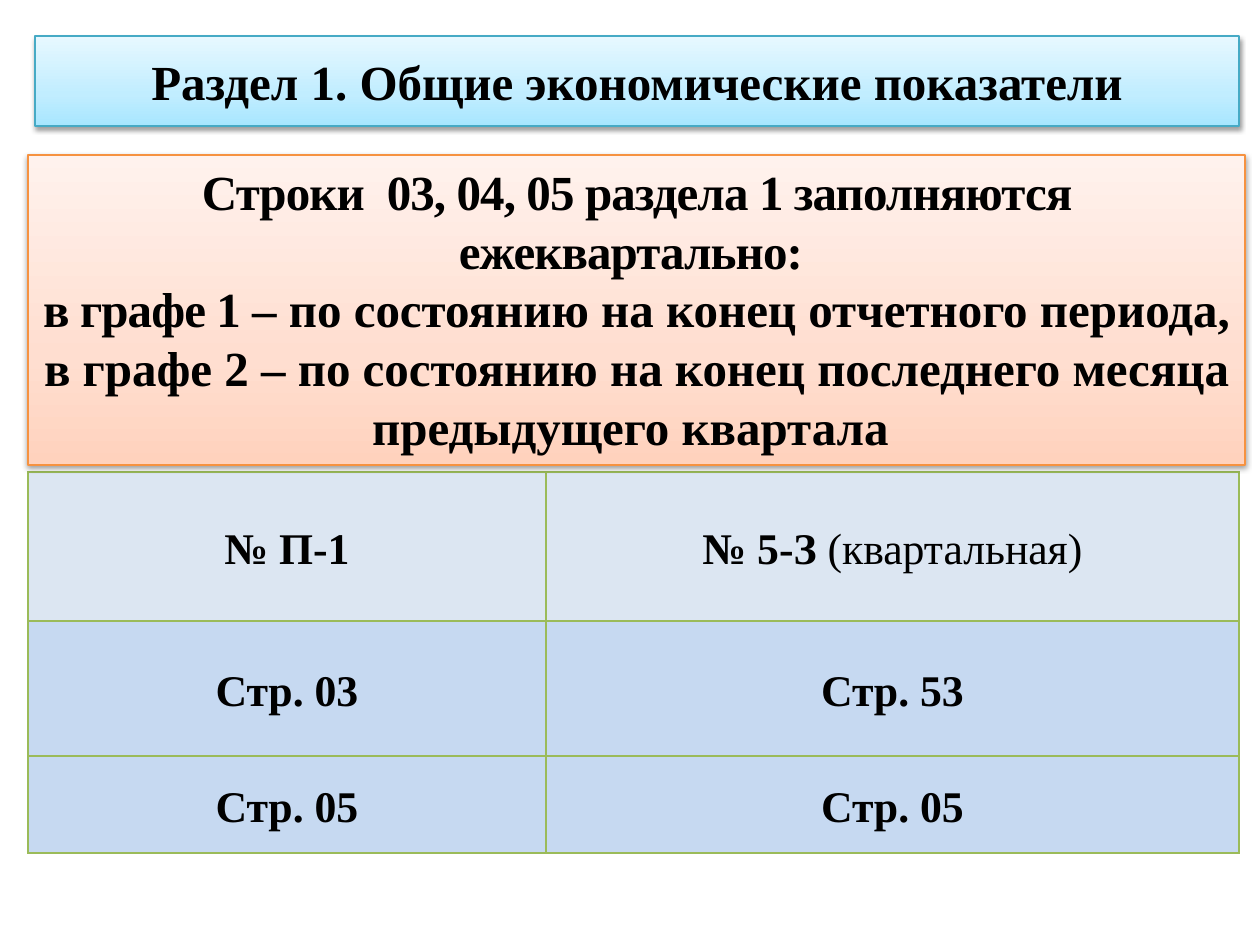
import pptx
import pptx.dml.color
import pptx.enum.shapes
import pptx.enum.text
import pptx.oxml
import pptx.oxml.ns
import pptx.util

# Content: a paragraph is a list of (text, run format) pairs
TITLE = [[("Раздел 1. Общие экономические показатели", {})]]
TIGHT = {"spacing": -0.5}
RULES = [
    [("Строки  03, 04, 05 раздела 1 заполняются ежеквартально: ", TIGHT)],
    [("в графе 1 ", TIGHT), ("– по состоянию на конец отчетного периода, ", {})],
    [("в графе 2 – по состоянию на конец последнего месяца предыдущего квартала ", {})],
]
TABLE_ROWS = [
    [[("№ П-1", {})], [("№ 5-З ", {}), ("(квартальная)", {"bold": False})]],
    [[("Стр. 03", {})], [("Стр. 53", {})]],
    [[("Стр. 05", {})], [("Стр. 05", {})]],
]

# Geometry in px
SLIDE_SIZE = (1260, 945)
TITLE_BOX = (35, 36, 1204, 90)
RULES_BOX = (28, 155, 1217, 310)
TABLE_ORIGIN = (28, 472)
COLUMN_WIDTHS = (518, 693)
ROW_HEIGHTS = (149, 135, 97)
CELL_MARGINS = ((11, 5), (13, 0))  # horizontal, vertical for each column

FONT = "Times New Roman"
COLORS = {
    "text": "000000",
    "title line": "46AAC5",
    "rules line": "F69240",
    "table line": "9BBB59",
    "table head": "DCE6F2",
    "table body": "C6D9F1",
}
# Gradient stops run from the bottom up
TITLE_STOPS = [(0, "A7E6FF"), (35, "C1EDFF"), (100, "E7F8FF")]
RULES_STOPS = [(0, "FFD2BD"), (35, "FFDED0"), (100, "FFF2ED")]
NAMESPACE = 'xmlns:a="http://schemas.openxmlformats.org/drawingml/2006/main"'


def px(value):
    return pptx.util.Emu(round(value * 914400 / 126))


def color(name):
    return pptx.dml.color.RGBColor.from_string(COLORS[name])


def write_text(frame, paragraphs, size=28, line_spacing=None):
    for index, runs in enumerate(paragraphs):
        paragraph = frame.paragraphs[0] if index == 0 else frame.add_paragraph()
        paragraph.alignment = pptx.enum.text.PP_ALIGN.CENTER
        paragraph.line_spacing = line_spacing
        for text, style in runs:
            run = paragraph.add_run()
            run.text = text
            run.font.name = FONT
            run.font.size = pptx.util.Pt(size)
            run.font.bold = style.get("bold", True)
            run.font.color.rgb = color("text")
            if "spacing" in style:
                run._r.get_or_add_rPr().set("spc", str(round(style["spacing"] * 100)))


def add_panel(slide, box, paragraphs, stops, line):
    shape = slide.shapes.add_shape(
        pptx.enum.shapes.MSO_SHAPE.RECTANGLE, *map(px, box))
    shape.line.color.rgb = color(line)
    shape.line.width = pptx.util.Pt(0.75)

    # Three-stop gradient
    shape.fill.gradient()
    shape.fill.gradient_angle = 90
    properties = shape._element.spPr
    stop_list = properties.find(".//" + pptx.oxml.ns.qn("a:gsLst"))
    for stop in list(stop_list):
        stop_list.remove(stop)
    for position, value in stops:
        stop_list.append(pptx.oxml.parse_xml(
            f'<a:gs {NAMESPACE} pos="{position * 1000}"><a:srgbClr val="{value}"/></a:gs>'))

    # Soft shadow below
    shape.shadow.inherit = False
    properties.find(pptx.oxml.ns.qn("a:effectLst")).append(pptx.oxml.parse_xml(
        f'<a:outerShdw {NAMESPACE} blurRad="40000" dist="20000" dir="5400000" rotWithShape="0">'
        '<a:srgbClr val="000000"><a:alpha val="38000"/></a:srgbClr></a:outerShdw>'))

    frame = shape.text_frame
    frame.word_wrap = True
    frame.vertical_anchor = pptx.enum.text.MSO_ANCHOR.MIDDLE
    write_text(frame, paragraphs)
    return shape


def set_borders(cell, line):
    properties = cell._tc.get_or_add_tcPr()
    for index, side in enumerate(("lnL", "lnR", "lnT", "lnB")):
        properties.insert(index, pptx.oxml.parse_xml(
            f'<a:{side} {NAMESPACE} w="12700"><a:solidFill>'
            f'<a:srgbClr val="{COLORS[line]}"/></a:solidFill></a:{side}>'))


def add_form_table(slide):
    table = slide.shapes.add_table(
        len(ROW_HEIGHTS), len(COLUMN_WIDTHS), *map(px, TABLE_ORIGIN),
        px(sum(COLUMN_WIDTHS)), px(sum(ROW_HEIGHTS))).table
    table.first_row = table.horz_banding = False
    for column, width in zip(table.columns, COLUMN_WIDTHS):
        column.width = px(width)
    for row_index, (row, height) in enumerate(zip(table.rows, ROW_HEIGHTS)):
        row.height = px(height)
        for column_index, runs in enumerate(TABLE_ROWS[row_index]):
            cell = table.cell(row_index, column_index)
            horizontal, vertical = CELL_MARGINS[column_index]
            cell.margin_left = cell.margin_right = px(horizontal)
            cell.margin_top = cell.margin_bottom = px(vertical)
            cell.vertical_anchor = pptx.enum.text.MSO_ANCHOR.MIDDLE
            cell.fill.solid()
            cell.fill.fore_color.rgb = color("table body" if row_index else "table head")
            set_borders(cell, "table line")
            write_text(cell.text_frame, [runs], size=25, line_spacing=1.15)


def main():
    presentation = pptx.Presentation()
    presentation.slide_width, presentation.slide_height = map(px, SLIDE_SIZE)
    slide = presentation.slides.add_slide(presentation.slide_layouts[6])

    add_form_table(slide)
    add_panel(slide, TITLE_BOX, TITLE, TITLE_STOPS, "title line")
    rules = add_panel(slide, RULES_BOX, RULES, RULES_STOPS, "rules line")
    rules.text_frame.vertical_anchor = pptx.enum.text.MSO_ANCHOR.TOP
    rules.text_frame.auto_size = pptx.enum.text.MSO_AUTO_SIZE.SHAPE_TO_FIT_TEXT

    presentation.save("out.pptx")


if __name__ == "__main__":
    main()
